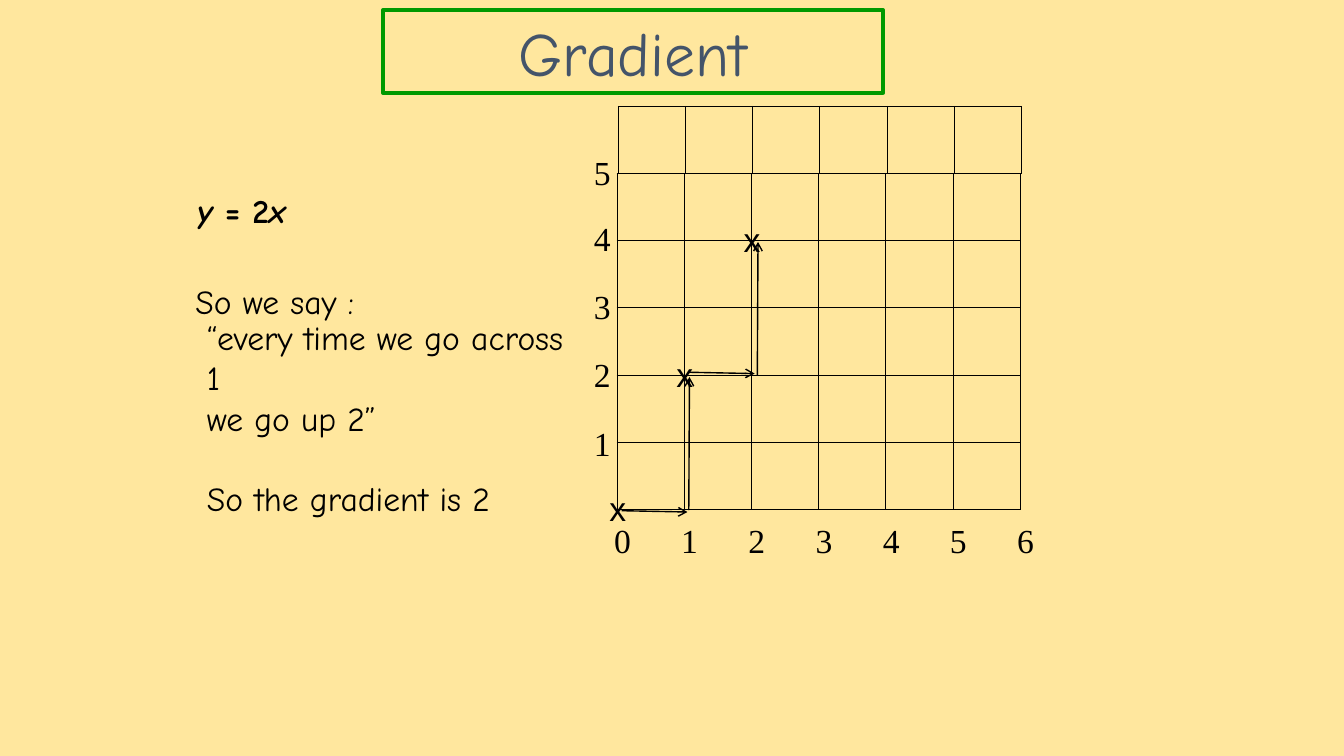
from itertools import groupby, product
from lxml.etree import SubElement
from pptx import Presentation
from pptx.dml.color import RGBColor
from pptx.enum.shapes import MSO_CONNECTOR, MSO_SHAPE
from pptx.enum.text import MSO_ANCHOR, MSO_AUTO_SIZE, PP_ALIGN
from pptx.oxml import parse_xml
from pptx.oxml.ns import nsdecls, qn
from pptx.util import Inches, Pt

THEME = {
    "back": RGBColor.from_string("FFE79E"),
    "ink": RGBColor.from_string("000000"),
    "title": RGBColor.from_string("44546A"),
    "frame": RGBColor.from_string("009900"),
    "hand": "Comic Neue",
    "serif": "Times New Roman",
    "sans": "Arial",
    "body": Pt(24),
    "head": Pt(44),
}

deck = Presentation()
deck.slide_width, deck.slide_height = Inches(13.333), Inches(7.5)
slide = deck.slides.add_slide(deck.slide_layouts[6])
slide.background.fill.solid()
slide.background.fill.fore_color.rgb = THEME["back"]
unit = deck.slide_width / 20


def grid(*parts):
    return [round(part * unit) for part in parts]


def write(text, at=None, shape=None, font="hand", size="body", color="ink",
          bold=None, slant="", wrap=False, align=None, gaps=None, tabs=0):
    shape = shape or slide.shapes.add_textbox(*grid(*at))
    frame = shape.text_frame
    frame.word_wrap = wrap
    if at:
        frame.auto_size = MSO_AUTO_SIZE.SHAPE_TO_FIT_TEXT
    for row, line in enumerate(text.split("\n")):
        para = frame.paragraphs[0] if row == 0 else frame.add_paragraph()
        para.alignment = align
        if gaps and gaps[row]:
            para.space_before = Pt(gaps[row])
        if tabs:
            stops = SubElement(para._p.get_or_add_pPr(), qn("a:tabLst"))
            for stop in range(1, tabs + 1):
                SubElement(stops, qn("a:tab"), pos=str(round(stop * unit)), algn="l")
        for tilt, chars in groupby(line, lambda char: char in slant):
            run = para.add_run()
            run.text = "".join(chars)
            run.font.name, run.font.size = THEME[font], THEME[size]
            run.font.color.rgb = THEME[color]
            run.font.bold, run.font.italic = bold, tilt or None


write("y = 2x", at=(2.79, 2.75, 2.15, 0.77), bold=True, slant="yx")

for left, top, rows in [(9.18, 2.58, 5), (9.2, 1.58, 1)]:
    table = slide.shapes.add_table(rows, 6, *grid(left, top, 6, rows)).table
    table.first_row = table.horz_banding = False
    for row, col in product(range(rows), range(6)):
        cell = table.cell(row, col)
        cell.fill.background()
        for spot, side in enumerate("LRTB"):
            cell._tc.get_or_add_tcPr().insert(spot, parse_xml(
                f'<a:ln{side} {nsdecls("a")} w="6350"><a:solidFill>'
                f'<a:srgbClr val="{THEME["ink"]}"/></a:solidFill></a:ln{side}>'))

write("\t".join(map(str, range(7))), at=(8.99, 7.67, 6.62, 0.77), font="serif", tabs=6)
write("\n".join(map(str, range(5, 0, -1))), at=(8.69, 2.19, 0.56, 5.96),
      font="serif", gaps=(0, 18, 20, 20, 20))
write("So we say :", at=(2.76, 4.11, 2.91, 0.77))
write("“every time we go across 1\nwe go up 2”\nSo the gradient is 2",
      at=(2.93, 4.64, 5.78, 3.18), wrap=True, gaps=(0, 0, 29))

for step in range(3):
    write("x", at=(8.92 + step, 7.19 - 2 * step, 0.56, 0.76), font="sans")

across, up = (0.98, 0.02), (0.01, -1.98)
for left, top, move in [(9.25, 7.6, across), (10.25, 7.59, up),
                        (10.25, 5.54, across), (11.27, 5.58, up)]:
    arrow = slide.shapes.add_connector(
        MSO_CONNECTOR.STRAIGHT, *grid(left, top, left + move[0], top + move[1]))
    arrow.line.color.rgb = THEME["ink"]
    arrow.line.width = Pt(1)
    SubElement(arrow.line._get_or_add_ln(), qn("a:tailEnd"), type="arrow")
    SubElement(arrow._element.spPr, qn("a:effectLst"))

title = slide.shapes.add_shape(MSO_SHAPE.RECTANGLE, *grid(5.7, 0.15, 7.44, 1.23))
title.shadow.inherit = False
title.fill.background()
title.line.color.rgb = THEME["frame"]
title.line.width = Pt(3)
title.text_frame.vertical_anchor = MSO_ANCHOR.MIDDLE
write("Gradient", shape=title, size="head", color="title", wrap=True, align=PP_ALIGN.CENTER)

deck.save("out.pptx")
